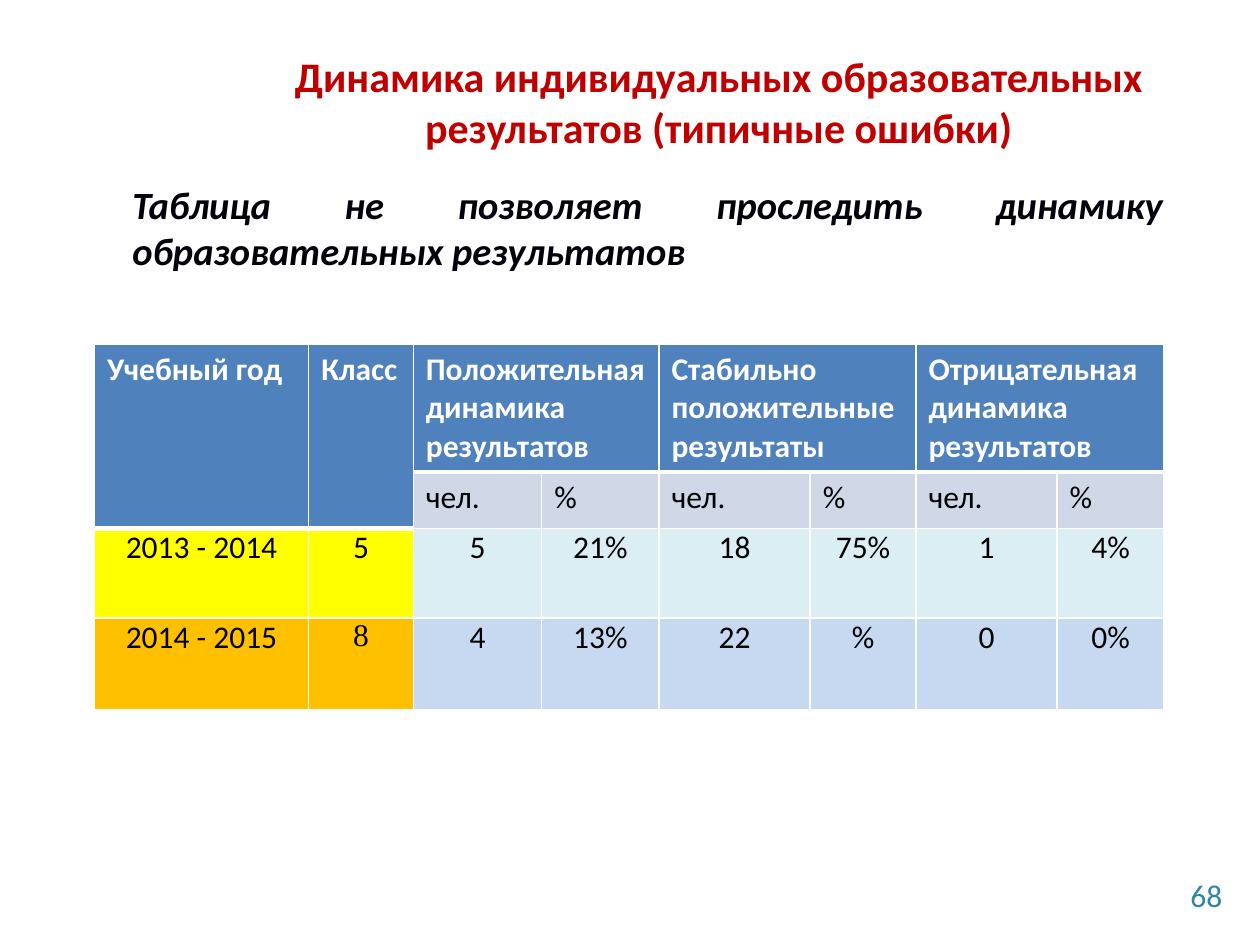
from lxml import etree
from pptx import Presentation
from pptx.dml.color import RGBColor
from pptx.enum import text
from pptx.oxml.ns import qn
from pptx.util import Pt

RED = RGBColor(0xC0, 0x00, 0x00)
TEAL = RGBColor(0x31, 0x85, 0x9C)
INK = RGBColor(0x00, 0x00, 0x0A)
BLACK = RGBColor(0x00, 0x00, 0x00)
WHITE = RGBColor(0xFF, 0xFF, 0xFF)
BLUE = RGBColor(0x4F, 0x81, 0xBD)
GREY_BLUE = RGBColor(0xD0, 0xD8, 0xE8)
YELLOW = RGBColor(0xFF, 0xFF, 0x00)
ORANGE = RGBColor(0xFF, 0xC0, 0x00)
PALE_TEAL = RGBColor(0xDB, 0xEE, 0xF4)
PALE_BLUE = RGBColor(0xC6, 0xD9, 0xF1)

LEFT, CENTER = text.PP_ALIGN.LEFT, text.PP_ALIGN.CENTER
COLUMNS = [122.4, 59.8, 73.4, 67, 86.4, 60.5, 80.6, 61.2]
ROWS = [64.8, 32.4, 51.1, 52.6]
HEADINGS = ["Учебный год", "Класс", "Положительная динамика результатов", "",
            "Стабильно положительные результаты", "",
            "Отрицательная динамика результатов", ""]
GRID = [
    HEADINGS,
    ["", ""] + ["чел.", "%"] * 3,
    ["2013 - 2014", "5", "5", "21%", "18", "75%", "1", "4%"],
    ["2014 - 2015", "8", "4", "13%", "22", "%", "0", "0%"],
]
# Fill of the two leading columns, then of the value columns, by row
FILLS = [(BLUE, BLUE), (BLUE, GREY_BLUE), (YELLOW, PALE_TEAL), (ORANGE, PALE_BLUE)]


def write(tf, content, size=18, color=BLACK, bold=False, italic=False,
          align=LEFT, font="Calibri"):
    p = tf.paragraphs[0]
    p.alignment = align
    p.space_before = Pt(0)
    r = p.add_run()
    r.text = content
    f = r.font
    f.name, f.size, f.bold, f.italic = font, Pt(size), bold, italic
    f.color.rgb = color


def place(sp, left, top, width, height, anchor):
    sp.left, sp.top, sp.width, sp.height = map(Pt, (left, top, width, height))
    tf = sp.text_frame
    tf.word_wrap = True
    tf.auto_size = text.MSO_AUTO_SIZE.NONE
    tf.vertical_anchor = anchor
    return tf


def add_title(s):
    tf = place(s.shapes.title, 116, 21, 589.5, 73.5, text.MSO_ANCHOR.MIDDLE)
    write(tf, "Динамика индивидуальных образовательных результатов (типичные ошибки)",
          size=24, color=RED, bold=True, align=CENTER)


def add_comment(s):
    tf = place(s.placeholders[1], 54, 100, 617.8, 60.5, text.MSO_ANCHOR.TOP)
    pPr = tf.paragraphs[0]._p.get_or_add_pPr()
    pPr.set("marL", str(Pt(14.4)))
    pPr.set("indent", "0")
    etree.SubElement(pPr, qn("a:buNone"))
    write(tf, "Таблица не позволяет проследить динамику образовательных результатов",
          size=22, color=INK, bold=True, italic=True, align=text.PP_ALIGN.JUSTIFY)


def add_page_number(s):
    box = s.shapes.add_textbox(0, 0, 0, 0)
    tf = place(box, 537.8, 496.8, 167.8, 28.8, text.MSO_ANCHOR.MIDDLE)
    write(tf, "68", color=TEAL, align=text.PP_ALIGN.RIGHT)


def set_borders(cell, top, bottom):
    tcPr = cell._tc.get_or_add_tcPr()
    for side, width in (("L", 1), ("R", 1), ("T", top), ("B", bottom)):
        ln = etree.SubElement(tcPr, qn("a:ln" + side), w=str(Pt(width)))
        fill = etree.SubElement(ln, qn("a:solidFill"))
        etree.SubElement(fill, qn("a:srgbClr"), val=str(WHITE))


def format_cell(cell, row, col):
    header_rows = 2 if col < 2 else 1
    header = row < header_rows
    set_borders(cell, top=3 if row == header_rows else 1,
                bottom=3 if row == header_rows - 1 else 1)
    cell.fill.solid()
    cell.fill.fore_color.rgb = FILLS[row][0 if col < 2 else 1]
    if row >= 2:
        cell.margin_left = cell.margin_right = Pt(5)
        cell.margin_top = cell.margin_bottom = 0
    content = GRID[row][col]
    if content:
        write(cell.text_frame, content, color=WHITE if header else BLACK,
              bold=header, align=CENTER if row >= 2 else LEFT,
              font="Times New Roman" if (row, col) == (3, 1) else "Calibri")


def add_results_table(s):
    frame = s.shapes.add_table(len(ROWS), len(COLUMNS), Pt(54), Pt(196.6),
                               Pt(612), Pt(207.4))
    tbl = frame.table
    for column, width in zip(tbl.columns, COLUMNS):
        column.width = Pt(width)
    for row, height in zip(tbl.rows, ROWS):
        row.height = Pt(height)
    for col in (0, 1):
        tbl.cell(0, col).merge(tbl.cell(1, col))
    for col in (2, 4, 6):
        tbl.cell(0, col).merge(tbl.cell(0, col + 1))
    for row in range(len(ROWS)):
        for col in range(len(COLUMNS)):
            format_cell(tbl.cell(row, col), row, col)


def main():
    prs = Presentation()
    prs.slide_width, prs.slide_height = Pt(720), Pt(540)
    s = prs.slides.add_slide(prs.slide_layouts[1])
    add_page_number(s)
    add_title(s)
    add_results_table(s)
    add_comment(s)
    prs.save("out.pptx")


if __name__ == "__main__":
    main()
